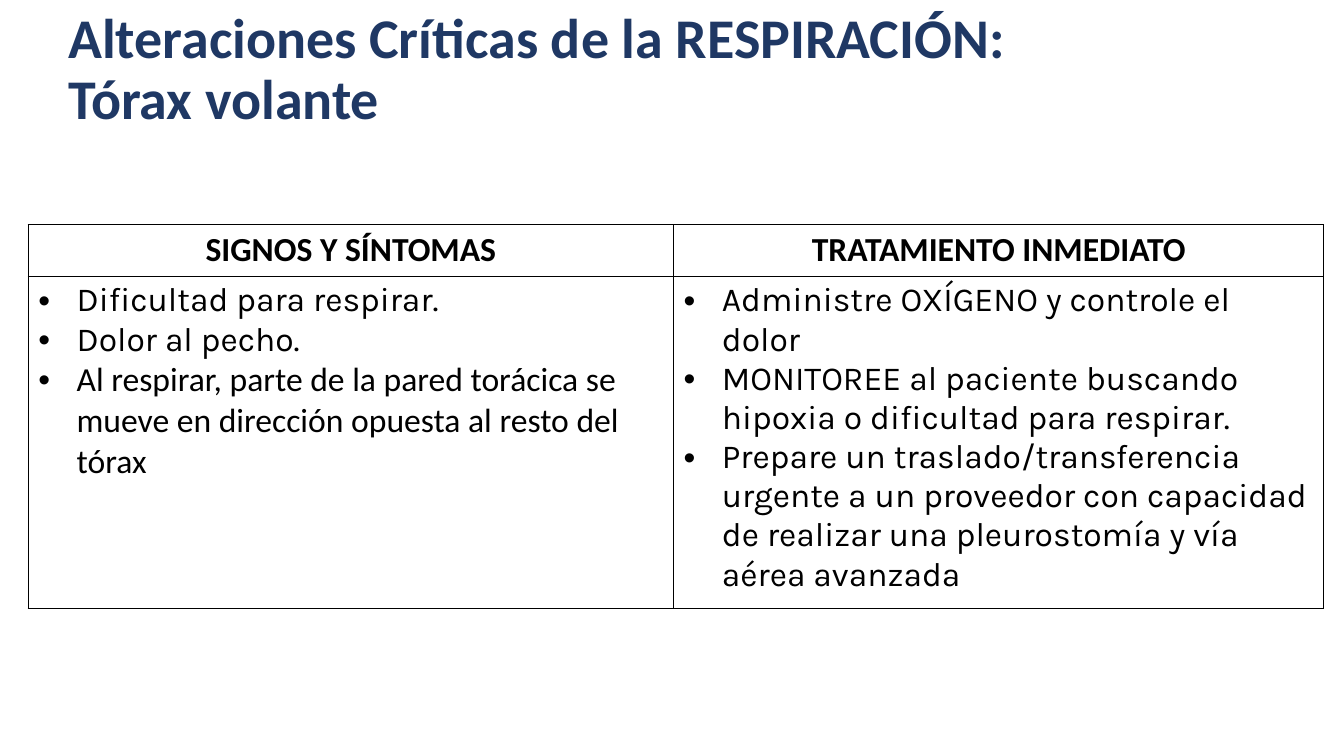
from lxml.etree import SubElement
from pptx import Presentation
from pptx.dml.color import RGBColor
from pptx.enum.text import MSO_ANCHOR, PP_ALIGN
from pptx.oxml.ns import qn
from pptx.util import Inches, Pt

TITLE = "Alteraciones Críticas de la RESPIRACIÓN:\vTórax volante"
COLUMNS = [
    {
        "heading": "SIGNOS Y SÍNTOMAS",
        "width": 6.4,
        "items": [
            ("Dificultad para respirar.", "Karla"),
            ("Dolor al pecho.", "Karla"),
            ("Al respirar, parte de la pared torácica se mueve en dirección opuesta al resto del tórax", "Calibri"),
        ],
    },
    {
        "heading": "TRATAMIENTO INMEDIATO",
        "width": 6.45,
        "items": [
            ("Administre OXÍGENO y controle el dolor", "Karla"),
            ("MONITOREE al paciente buscando hipoxia o dificultad para respirar.", "Karla"),
            ("Prepare un traslado/transferencia urgente a un proveedor con capacidad "
             "de realizar una pleurostomía y vía aérea avanzada", "Karla"),
        ],
    },
]
ROW_HEIGHTS = [0.51, 3.21]
TABLE_LEFT, TABLE_TOP = 0.28, 2.23
BULLET_INDENT = 0.38
NAVY, BLACK = "1F3864", "000000"
TITLE_FORMAT = {"name": "Calibri", "size": Pt(40), "bold": True}
HEADING_FORMAT = {"name": "Calibri", "size": Pt(24), "bold": True}
ITEM_FORMAT = {"size": Pt(24), "bold": False}


def set_color(color_format, color):
    color_format.rgb = RGBColor.from_string(color)


def write(paragraph, text, font_format, color):
    paragraph.text = text
    for run in paragraph.runs:
        for name, value in font_format.items():
            setattr(run.font, name, value)
        run.font.fill.solid()
        set_color(run.font.fill.fore_color, color)


def add_bullet(paragraph):
    properties = paragraph._p.get_or_add_pPr()
    indent = Inches(BULLET_INDENT)
    properties.set("marL", str(indent))
    properties.set("indent", str(-indent))
    SubElement(properties, qn("a:buFont"), typeface="Arial")
    SubElement(properties, qn("a:buChar"), char="•")


def outline(cell):
    """Give a cell thin black borders and no fill."""
    properties = cell._tc.get_or_add_tcPr()
    for side in ("a:lnL", "a:lnR", "a:lnT", "a:lnB"):
        line = SubElement(properties, qn(side), w=str(Pt(1)))
        fill = SubElement(line, qn("a:solidFill"))
        SubElement(fill, qn("a:srgbClr"), val=BLACK)
    cell.fill.background()


def add_title(slide):
    box = slide.shapes.add_textbox(Inches(0.58), Inches(0.08), Inches(11.5), Inches(1.25))
    frame = box.text_frame
    frame.word_wrap = True
    frame.vertical_anchor = MSO_ANCHOR.MIDDLE
    paragraph = frame.paragraphs[0]
    paragraph.line_spacing = 0.9
    write(paragraph, TITLE, TITLE_FORMAT, NAVY)


def add_care_table(slide):
    width = sum(column["width"] for column in COLUMNS)
    table = slide.shapes.add_table(
        len(ROW_HEIGHTS), len(COLUMNS), Inches(TABLE_LEFT), Inches(TABLE_TOP),
        Inches(width), Inches(sum(ROW_HEIGHTS))).table
    table.first_row = table.horz_banding = False
    for row, height in zip(table.rows, ROW_HEIGHTS):
        row.height = Inches(height)
    for index, column in enumerate(COLUMNS):
        table.columns[index].width = Inches(column["width"])
        heading_cell, items_cell = table.cell(0, index), table.cell(1, index)
        outline(heading_cell)
        outline(items_cell)
        heading = heading_cell.text_frame.paragraphs[0]
        heading.alignment = PP_ALIGN.CENTER
        write(heading, column["heading"], HEADING_FORMAT, BLACK)
        frame = items_cell.text_frame
        for number, (text, font_name) in enumerate(column["items"]):
            paragraph = frame.add_paragraph() if number else frame.paragraphs[0]
            add_bullet(paragraph)
            write(paragraph, text, {**ITEM_FORMAT, "name": font_name}, BLACK)


def main():
    presentation = Presentation()
    presentation.slide_width, presentation.slide_height = Inches(13.33), Inches(7.5)
    slide = presentation.slides.add_slide(presentation.slide_layouts[6])
    add_title(slide)
    add_care_table(slide)
    presentation.save("out.pptx")


if __name__ == "__main__":
    main()
